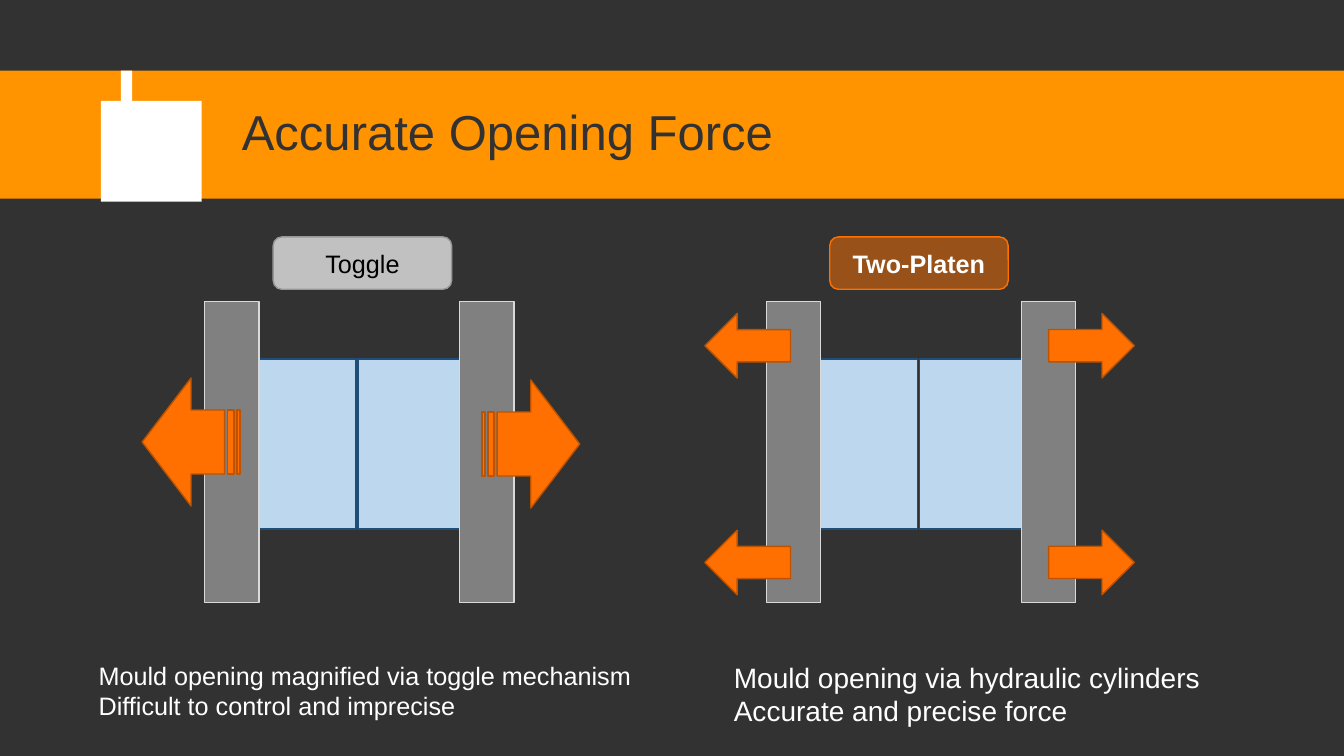
from dataclasses import dataclass
from typing import Optional

from lxml import etree
from pptx import Presentation
from pptx.dml.color import RGBColor
from pptx.enum.shapes import MSO_SHAPE
from pptx.enum.text import MSO_ANCHOR, MSO_AUTO_SIZE, PP_ALIGN
from pptx.oxml.ns import qn
from pptx.util import Inches, Pt

RECT = MSO_SHAPE.RECTANGLE
ROUNDED = MSO_SHAPE.ROUNDED_RECTANGLE
ARROW = MSO_SHAPE.RIGHT_ARROW
STRIPED = MSO_SHAPE.STRIPED_RIGHT_ARROW
MIDDLE = MSO_ANCHOR.MIDDLE
TOP = MSO_ANCHOR.TOP
CENTER = PP_ALIGN.CENTER
LEFT = PP_ALIGN.LEFT
FIT_SHAPE = MSO_AUTO_SIZE.SHAPE_TO_FIT_TEXT

DARK = RGBColor(0x32, 0x32, 0x32)
AMBER = RGBColor(0xFF, 0x93, 0x00)
ORANGE = RGBColor(0xFF, 0x70, 0x00)
RUST = RGBColor(0xBD, 0x53, 0x00)
WHITE = RGBColor(0xFF, 0xFF, 0xFF)
BLACK = RGBColor(0x00, 0x00, 0x00)
GRAY = RGBColor(0x80, 0x80, 0x80)
SILVER = RGBColor(0xD9, 0xD9, 0xD9)
LABEL_EDGE = RGBColor(0x98, 0x98, 0x98)
SKY = RGBColor(0xBD, 0xD7, 0xEE)
NAVY = RGBColor(0x1F, 0x4E, 0x79)

FONT = "Arial"
BAND_TOP, BAND_HEIGHT = 0.7, 1.27
PLATEN_TOP, PLATEN_WIDTH, PLATEN_HEIGHT = 2.99, 0.54, 2.99
MOULD_TOP, MOULD_HEIGHT = 3.56, 1.69


@dataclass
class Box:
    left: float
    top: float
    width: float
    height: float


@dataclass
class Style:
    fill: RGBColor
    line: Optional[RGBColor] = None
    alpha: int = 100


@dataclass
class Arrow:
    kind: MSO_SHAPE
    box: Box
    rotation: int


@dataclass
class Label:
    text: str
    left: float
    style: Style
    color: RGBColor
    bold: bool


@dataclass
class Caption:
    lines: list[str]
    box: Box
    size: int


MOULD = Style(SKY, NAVY)
PLATEN = Style(GRAY, SILVER)
FORCE = Style(ORANGE, RUST)

PRESS_LEFTS = [2.03, 7.6]
ARROWS = [
    Arrow(ARROW, Box(left, top, 0.85, 0.64), rotation)
    for top in (3.11, 5.26)
    for left, rotation in ((6.99, 180), (10.4, 0))
] + [
    Arrow(STRIPED, Box(4.78, 3.77, 0.97, 1.27), 0),
    Arrow(STRIPED, Box(1.41, 3.75, 0.97, 1.27), 180),
]
LABELS = [
    Label("Toggle", 2.71, Style(WHITE, LABEL_EDGE, 70), BLACK, False),
    Label("Two-Platen", 8.23, Style(ORANGE, ORANGE, 50), WHITE, True),
]
CAPTIONS = [
    Caption(["Mould opening magnified via toggle mechanism",
             "Difficult to control and imprecise"], Box(0.88, 6.5, 5.53, 0.71), 18),
    Caption(["Mould opening via hydraulic cylinders",
             "Accurate and precise force"], Box(7.18, 6.5, 4.87, 0.77), 20),
]


def place(box: Box) -> list[int]:
    return [Inches(v) for v in (box.left, box.top, box.width, box.height)]


def paint(sp, style: Style) -> None:
    sp.shadow.inherit = False
    sp.fill.solid()
    sp.fill.fore_color.rgb = style.fill
    if style.alpha < 100:
        color = sp.fill._xPr.find(qn("a:solidFill"))[0]
        etree.SubElement(color, qn("a:alpha"), val=str(style.alpha * 1000))
    if style.line is None:
        sp.line.fill.background()
    else:
        sp.line.color.rgb = style.line
        sp.line.width = Pt(1)


def add_shape(s, kind: MSO_SHAPE, box: Box, style: Style):
    sp = s.shapes.add_shape(kind, *place(box))
    paint(sp, style)
    return sp


def write(tf, lines: list[str], size: int, color: RGBColor, bold: bool = False,
          align: PP_ALIGN = LEFT, anchor: MSO_ANCHOR = TOP) -> None:
    tf.vertical_anchor = anchor
    for i, line in enumerate(lines):
        p = tf.add_paragraph() if i else tf.paragraphs[0]
        p.alignment = align
        r = p.add_run()
        r.text = line
        r.font.name = FONT
        r.font.size = Pt(size)
        r.font.bold = bold
        r.font.color.rgb = color


def add_header(s) -> None:
    add_shape(s, RECT, Box(0, BAND_TOP, 13.33, BAND_HEIGHT), Style(AMBER))
    add_shape(s, RECT, Box(1.2, BAND_TOP, 0.11, BAND_HEIGHT), Style(WHITE))
    bottom = BAND_TOP + BAND_HEIGHT
    outline = s.shapes.build_freeform(1.42, BAND_TOP, scale=Inches(1))
    outline.add_line_segments([(1.42, bottom), (1.72, bottom),
                               (1.94, BAND_TOP + BAND_HEIGHT / 2), (1.72, BAND_TOP)])
    paint(outline.convert_to_shape(), Style(WHITE))
    title = s.shapes.add_textbox(*place(Box(2.3, BAND_TOP, 10.12, BAND_HEIGHT)))
    tf = title.text_frame
    tf.word_wrap = True
    write(tf, ["Accurate Opening Force"], 35, DARK, anchor=MIDDLE)
    tf.paragraphs[0].line_spacing = 0.9


def add_press(s, left: float) -> None:
    for offset, width in ((0.54, 0.96), (1.52, 1.01)):
        add_shape(s, RECT, Box(left + offset, MOULD_TOP, width, MOULD_HEIGHT), MOULD)
    for offset in (0, 2.53):
        add_shape(s, RECT, Box(left + offset, PLATEN_TOP, PLATEN_WIDTH, PLATEN_HEIGHT), PLATEN)


def add_arrow(s, arrow: Arrow) -> None:
    sp = add_shape(s, arrow.kind, arrow.box, FORCE)
    sp.rotation = arrow.rotation


def add_label(s, label: Label) -> None:
    sp = add_shape(s, ROUNDED, Box(label.left, 2.35, 1.77, 0.52), label.style)
    write(sp.text_frame, [label.text], 18, label.color, label.bold, CENTER, MIDDLE)


def add_caption(s, caption: Caption) -> None:
    tf = s.shapes.add_textbox(*place(caption.box)).text_frame
    tf.word_wrap = False
    tf.auto_size = FIT_SHAPE
    write(tf, caption.lines, caption.size, WHITE)


def main() -> None:
    prs = Presentation()
    prs.slide_width = Inches(13.33)
    prs.slide_height = Inches(7.5)
    s = prs.slides.add_slide(prs.slide_layouts[6])
    s.background.fill.solid()
    s.background.fill.fore_color.rgb = DARK
    add_header(s)
    for left in PRESS_LEFTS:
        add_press(s, left)
    for arrow in ARROWS:
        add_arrow(s, arrow)
    for label in LABELS:
        add_label(s, label)
    for caption in CAPTIONS:
        add_caption(s, caption)
    prs.save("out.pptx")


if __name__ == "__main__":
    main()
